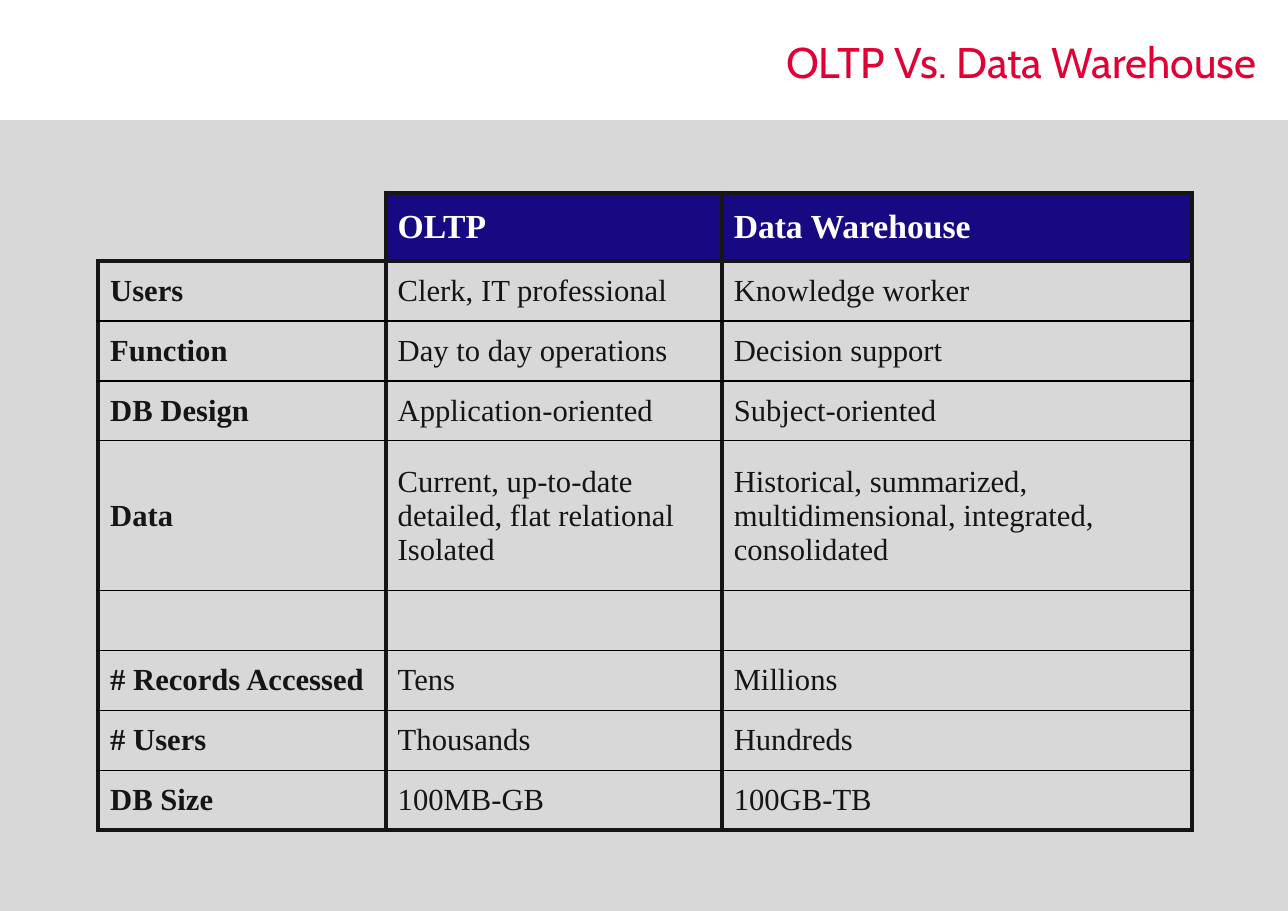
from dataclasses import dataclass

from lxml import etree
from pptx import Presentation
from pptx.dml.color import RGBColor
from pptx.enum.shapes import MSO_SHAPE
from pptx.enum.text import MSO_ANCHOR, PP_ALIGN
from pptx.oxml.ns import qn
from pptx.slide import Slide
from pptx.table import _Cell
from pptx.util import Inches, Pt

RECTANGLE = MSO_SHAPE.RECTANGLE
MIDDLE = MSO_ANCHOR.MIDDLE
RIGHT = PP_ALIGN.RIGHT

RED = RGBColor(0xE0, 0x00, 0x34)
GRAY = RGBColor(0xD8, 0xD8, 0xD8)
NAVY = RGBColor(0x17, 0x09, 0x81)
WHITE = RGBColor(0xFF, 0xFF, 0xFF)
INK = RGBColor(0x15, 0x15, 0x15)
BLACK = RGBColor(0x00, 0x00, 0x00)

TITLE_FONT = "Cabin"
TABLE_FONT = "Times New Roman"

SLIDE_WIDTH, SLIDE_HEIGHT = 11.69, 8.27
BAND_TOP = 1.09
TABLE_LEFT, TABLE_TOP = 0.89, 1.75
TABLE_HEIGHT = 5.79
COLUMN_WIDTHS = (2.61, 3.05, 4.27)
HEADER_HEIGHT = 0.62
DATA_HEIGHT = 1.36


@dataclass(frozen=True)
class Border:
    color: RGBColor
    points: float


THICK = Border(INK, 3)
THIN = Border(BLACK, 1)


@dataclass(frozen=True)
class ComparisonRow:
    label: str
    oltp: str
    warehouse: str


HEADER = ComparisonRow("", "OLTP", "Data Warehouse")
DATA = ComparisonRow(
    "Data",
    "Current, up-to-date\ndetailed, flat relational\nIsolated",
    "Historical, summarized, multidimensional, integrated, consolidated",
)
ROWS = (
    HEADER,
    ComparisonRow("Users", "Clerk, IT professional", "Knowledge worker"),
    ComparisonRow("Function", "Day to day operations", "Decision support"),
    ComparisonRow("DB Design", "Application-oriented", "Subject-oriented"),
    DATA,
    ComparisonRow("", "", ""),
    ComparisonRow("# Records Accessed", "Tens", "Millions"),
    ComparisonRow("# Users", "Thousands", "Hundreds"),
    ComparisonRow("DB Size", "100MB-GB", "100GB-TB"),
)


def set_borders(cell: _Cell, left: Border | None, right: Border | None,
                top: Border | None, bottom: Border | None) -> None:
    """Draw the four cell edges; None hides an edge. Call before filling."""
    properties = cell._tc.get_or_add_tcPr()
    edges = {"a:lnL": left, "a:lnR": right, "a:lnT": top, "a:lnB": bottom}
    for tag, border in edges.items():
        line = etree.SubElement(properties, qn(tag))
        if border is None:
            etree.SubElement(line, qn("a:noFill"))
            continue
        line.set("w", str(Pt(border.points)))
        fill = etree.SubElement(line, qn("a:solidFill"))
        etree.SubElement(fill, qn("a:srgbClr"), val=str(border.color))


def write_cell(cell: _Cell, text: str, size: float, color: RGBColor, bold: bool) -> None:
    cell.vertical_anchor = MIDDLE
    cell.margin_left = cell.margin_right = Inches(0.11)
    cell.margin_top = cell.margin_bottom = Inches(0.05)
    frame = cell.text_frame
    for index, content in enumerate(text.split("\n") if text else ()):
        paragraph = frame.add_paragraph() if index else frame.paragraphs[0]
        run = paragraph.add_run()
        run.text = content
        run.font.name = TABLE_FONT
        run.font.size = Pt(size)
        run.font.bold = bold
        run.font.color.rgb = color


def add_gray_band(slide: Slide) -> None:
    band = slide.shapes.add_shape(
        RECTANGLE, 0, Inches(BAND_TOP),
        Inches(SLIDE_WIDTH), Inches(SLIDE_HEIGHT - BAND_TOP))
    band.shadow.inherit = False
    band.fill.solid()
    band.fill.fore_color.rgb = GRAY
    band.line.fill.background()


def write_title(slide: Slide) -> None:
    title = slide.shapes.title
    title.left, title.top = Inches(3.31), Inches(0.16)
    title.width, title.height = Inches(8.19), Inches(0.79)
    title.text_frame.vertical_anchor = MIDDLE
    paragraph = title.text_frame.paragraphs[0]
    paragraph.alignment = RIGHT
    run = paragraph.add_run()
    run.text = "OLTP Vs. Data Warehouse"
    run.font.name = TITLE_FONT
    run.font.size = Pt(28)
    run.font.color.rgb = RED


def add_comparison_table(slide: Slide) -> None:
    table = slide.shapes.add_table(
        len(ROWS), len(COLUMN_WIDTHS), Inches(TABLE_LEFT), Inches(TABLE_TOP),
        Inches(sum(COLUMN_WIDTHS)), Inches(TABLE_HEIGHT)).table
    table.first_row = False
    table.horz_banding = False
    for column, width in zip(table.columns, COLUMN_WIDTHS):
        column.width = Inches(width)

    plain_height = (TABLE_HEIGHT - HEADER_HEIGHT - DATA_HEIGHT) / (len(ROWS) - 2)
    last = len(ROWS) - 1
    for row_index, row in enumerate(ROWS):
        is_header = row is HEADER
        height = HEADER_HEIGHT if is_header else DATA_HEIGHT if row is DATA else plain_height
        table.rows[row_index].height = Inches(height)
        top = THICK if row_index <= 1 else THIN
        bottom = THICK if row_index in (0, last) else THIN
        for column_index, text in enumerate((row.label, row.oltp, row.warehouse)):
            cell = table.cell(row_index, column_index)
            is_label = column_index == 0
            is_corner = is_header and is_label
            set_borders(cell, None if is_corner else THICK, THICK,
                        None if is_corner else top, bottom)
            if is_header and not is_label:
                cell.fill.solid()
                cell.fill.fore_color.rgb = NAVY
            else:
                cell.fill.background()
            write_cell(cell, text, 22 if is_header else 20,
                       WHITE if is_header else INK, is_header or is_label)


def main() -> None:
    presentation = Presentation()
    presentation.slide_width = Inches(SLIDE_WIDTH)
    presentation.slide_height = Inches(SLIDE_HEIGHT)
    title_only = presentation.slide_layouts[5]
    slide = presentation.slides.add_slide(title_only)
    add_gray_band(slide)
    write_title(slide)
    add_comparison_table(slide)
    presentation.save("out.pptx")


if __name__ == "__main__":
    main()
